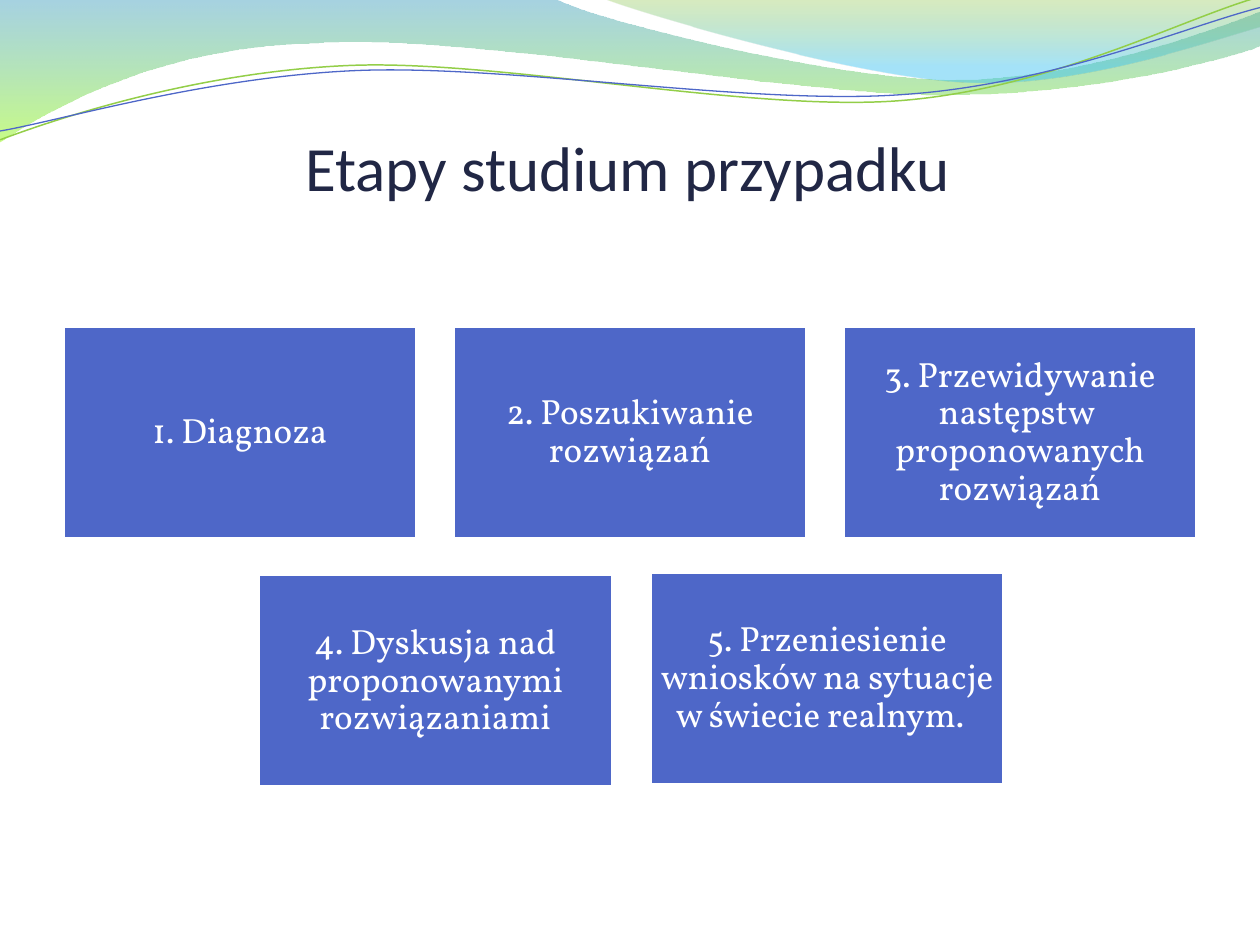
import math
import pptx
import pptx.util
import pptx.dml.color
import pptx.enum.text
import pptx.enum.shapes
import pptx.oxml
import pptx.oxml.ns

Inches = pptx.util.Inches
Pt = pptx.util.Pt
qn = pptx.oxml.ns.qn
SPACE = pptx.oxml.ns.nsdecls("a")
CENTER = pptx.enum.text.PP_ALIGN.CENTER
MIDDLE = pptx.enum.text.MSO_ANCHOR.MIDDLE
BOTTOM = pptx.enum.text.MSO_ANCHOR.BOTTOM

COLORS = {
    "box": "4E67C8", "white": "FFFFFF", "title": "212745",
    "teal": "3B9CBF", "lime": "9CFA24", "leaf": "7EBE2C",
    "sky": "39C1F1", "green": "93CE48",
}

BANDS = [
    ([(0, 0), (4.4, -0.01),
      (4.76, 0.17, 6.64, 0.63, 7.58, 0.63), (8.53, 0.63, 9.58, 0.26, 10, 0.09),
      (10.01, 0.36),
      (9.83, 0.44, 8.7, 0.76, 7.46, 0.75), (6.22, 0.75, 3.82, 0.28, 2.57, 0.34),
      (1.29, 0.36, 0.46, 0.83, -0.01, 1.13)],
     [(0, "teal", 45), (1, "lime", 55)]),
    ([(4.79, -0.01),
      (5.09, 0.11, 6.82, 0.62, 7.69, 0.65), (8.56, 0.69, 9.61, 0.32, 10, 0.21),
      (10, 0)],
     [(0, "leaf", 30), (0.8, "sky", 45)]),
]

TILT = 2.7
WAVES = [
    ([(0, 1.11), (0.48, 0.93, 1.58, 0.57, 2.77, 0.52),
      (3.95, 0.47, 5.93, 0.89, 7.13, 0.8), (8.33, 0.71, 9.38, 0.15, 9.98, -0.02)],
     "green", 0.85),
    ([(0, 1.04), (0.47, 0.96, 1.64, 0.61, 2.83, 0.56),
      (4.03, 0.51, 5.97, 0.84, 7.17, 0.75), (8.36, 0.67, 9.41, 0.21, 10, 0.06)],
     "box", 0.75),
]

BOX_W = 2.81
BOX_H = BOX_W * 0.6
LEFT, TOP = 0.5, 2.59
STEP = (10 - 2 * LEFT - BOX_W) / 2
TOP_ROW = ["1. Diagnoza", "2. Poszukiwanie rozwiązań",
           "3. Przewidywanie następstw  proponowanych rozwiązań"]
LOW_ROW = [(2.05, 4.56, "4. Dyskusja nad proponowanymi rozwiązaniami"),
           (5.16, 4.54, "5. Przeniesienie wniosków na sytuacje w świecie realnym.  ")]


def tint(key):
    return pptx.dml.color.RGBColor.from_string(COLORS[key])


def apply(item, form):
    for key, value in form.items():
        setattr(item, key, value)


def pairs(part):
    return list(zip(part[::2], part[1::2]))


def turn(part, angle, mid=(4.99, 0.58)):
    cos, sin = math.cos(math.radians(angle)), math.sin(math.radians(angle))
    spots = []
    for x, y in pairs(part):
        dx, dy = x - mid[0], y - mid[1]
        spots += [mid[0] + dx * cos - dy * sin, mid[1] + dx * sin + dy * cos]
    return tuple(spots)


def add_curve(slide, parts, close):
    ends = [(Inches(part[-2]), Inches(part[-1])) for part in parts]
    pen = slide.shapes.build_freeform(*ends[0], scale=1.0)
    pen.add_line_segments(ends[1:], close=close)
    shape = pen.convert_to_shape()
    shape.shadow.inherit = False
    lines = list(shape._element.spPr.iter(qn("a:lnTo")))
    for line, part in zip(lines, parts[1:]):
        if len(part) == 6:
            spots = "".join(
                f'<a:pt x="{Inches(x) - shape.left}" y="{Inches(y) - shape.top}"/>'
                for x, y in pairs(part))
            bend = f"<a:cubicBezTo {SPACE}>{spots}</a:cubicBezTo>"
            line.getparent().replace(line, pptx.oxml.parse_xml(bend))
    return shape


def add_band(slide, parts, stops):
    shape = add_curve(slide, parts, True)
    shape.line.fill.background()
    shape.fill.gradient()
    shape.fill.gradient_angle = 270
    for stop, (place, key, _) in zip(shape.fill.gradient_stops, stops):
        stop.position = place
        stop.color.rgb = tint(key)
    nodes = list(shape._element.spPr.iter(qn("a:srgbClr")))
    for node, (_, _, alpha) in zip(nodes, stops):
        node.append(pptx.oxml.parse_xml(
            f'<a:alpha {SPACE} val="{alpha * 1000}"/>'))


def add_wave(slide, parts, key, width):
    shape = add_curve(slide, [turn(part, TILT) for part in parts], False)
    shape.rotation = 360 - TILT
    shape.fill.background()
    shape.line.color.rgb = tint(key)
    shape.line.width = Pt(width)


def set_text(shape, text, frame, para, font, key):
    box = shape.text_frame
    box.text = text
    apply(box, {"word_wrap": True, **frame})
    line = box.paragraphs[0]
    apply(line, {"alignment": CENTER, **para})
    apply(line.runs[0].font, font)
    line.runs[0].font.color.rgb = tint(key)


def add_title(slide, text):
    title = slide.shapes.title
    apply(title, {"left": Inches(1.14), "top": Inches(0.52),
                  "width": Inches(7.68), "height": Inches(1.1)})
    frame = {"vertical_anchor": BOTTOM, "margin_left": 0, "margin_right": 0,
             "margin_top": Inches(0.05), "margin_bottom": 0}
    set_text(title, text, frame, {}, {"size": Pt(36), "name": "Calibri"}, "title")


def add_box(slide, x, y, text):
    rect = pptx.enum.shapes.MSO_SHAPE.RECTANGLE
    box = slide.shapes.add_shape(rect, Inches(x), Inches(y),
                                 Inches(BOX_W), Inches(BOX_H))
    box.shadow.inherit = False
    box.fill.solid()
    box.fill.fore_color.rgb = tint("box")
    box.line.color.rgb = tint("white")
    box.line.width = Pt(2)
    frame = {"margin_" + side: Inches(0.08)
             for side in ("left", "right", "top", "bottom")}
    set_text(box, text, {"vertical_anchor": MIDDLE, **frame},
             {"line_spacing": 0.9}, {"size": Pt(20), "name": "Vollkorn"}, "white")


def main():
    deck = pptx.Presentation()
    apply(deck, {"slide_width": Inches(10), "slide_height": Inches(7.5)})
    slide = deck.slides.add_slide(deck.slide_layouts[5])
    for band in BANDS:
        add_band(slide, *band)
    for wave in WAVES:
        add_wave(slide, *wave)
    add_title(slide, "Etapy studium przypadku")
    for i, text in enumerate(TOP_ROW):
        add_box(slide, LEFT + i * STEP, TOP, text)
    for x, y, text in LOW_ROW:
        add_box(slide, x, y, text)
    deck.save("out.pptx")


if __name__ == "__main__":
    main()
